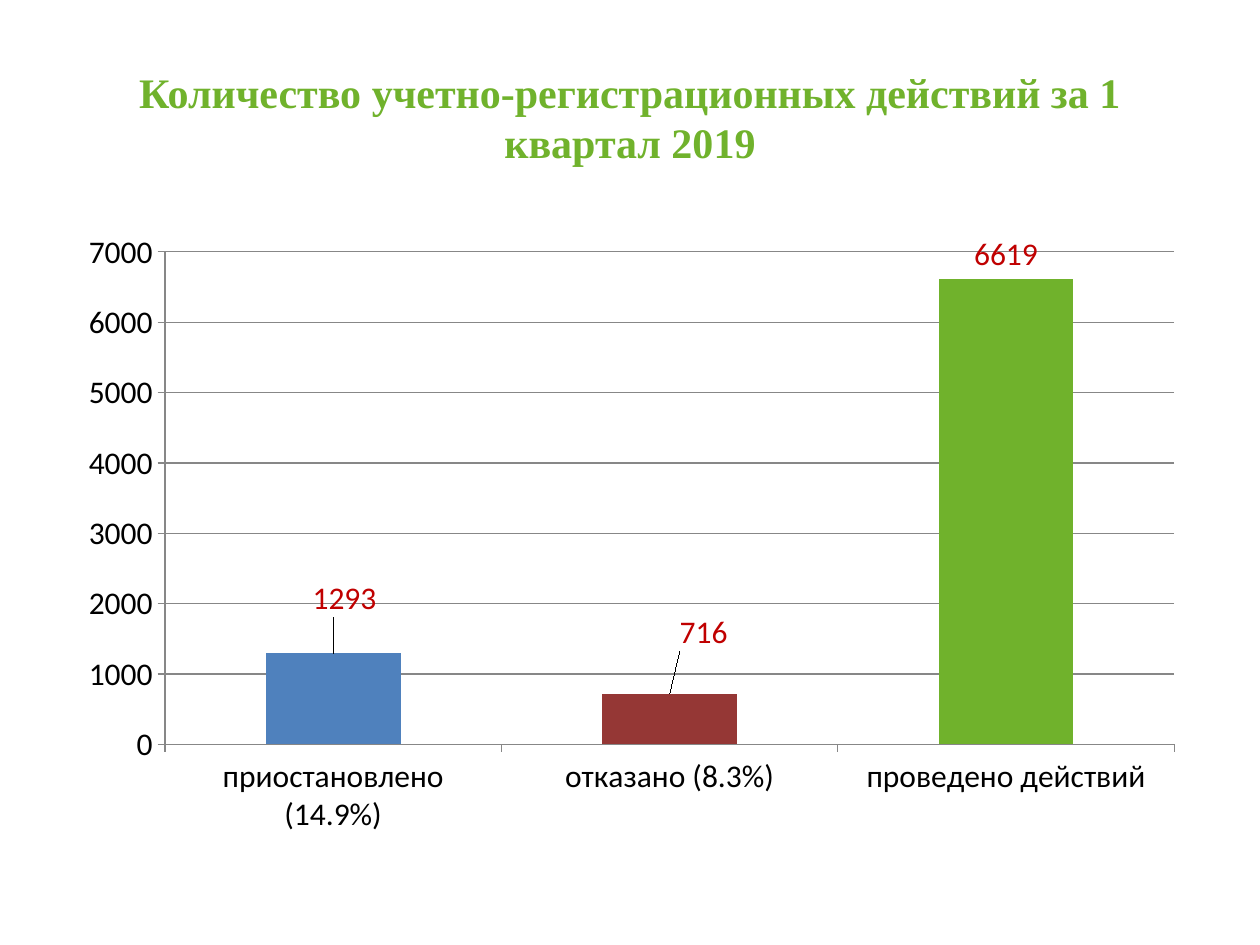
from typing import NamedTuple

from pptx import Presentation
from pptx.chart.data import CategoryChartData
from pptx.dml.color import RGBColor
from pptx.enum.chart import XL_CHART_TYPE, XL_LABEL_POSITION, XL_TICK_MARK
from pptx.enum.text import MSO_ANCHOR, PP_ALIGN
from pptx.oxml import parse_xml
from pptx.oxml.ns import nsdecls
from pptx.util import Cm, Pt

COLUMN = XL_CHART_TYPE.COLUMN_CLUSTERED
ABOVE = XL_LABEL_POSITION.OUTSIDE_END
OUTSIDE = XL_TICK_MARK.OUTSIDE
MIDDLE = MSO_ANCHOR.MIDDLE
CENTER = PP_ALIGN.CENTER

GREEN, RED, GRAY = "70B22C", "C00000", "878787"
LEFT, WIDTH = Cm(1.27), Cm(22.86)


class Bar(NamedTuple):
    name: str
    value: int
    color: str
    shift: tuple[float, float] | None = None  # label offset, share of chart size


BARS = [
    Bar("приостановлено (14.9%)", 1293, "4F81BD", (0.01, -0.05)),
    Bar("отказано (8.3%)", 716, "953735", (0.03, -0.06)),
    Bar("проведено действий", 6619, GREEN),
]


def paint(target, color: str) -> None:
    """Give a fill or a line format one solid colour."""
    if hasattr(target, "solid"):
        target.solid()
        target.fore_color.rgb = RGBColor.from_string(color)
    else:
        paint(target.fill, color)


def style(font, size: int, color: str, name: str = "Calibri") -> None:
    font.size, font.name = Pt(size), name
    font.color.rgb = RGBColor.from_string(color)


def layout(**parts: str | float):
    """Build a manual chart layout from its child values."""
    inner = "".join(f'<c:{key} val="{val}"/>' for key, val in parts.items())
    return parse_xml(
        f'<c:layout {nsdecls("c")}><c:manualLayout>{inner}'
        "</c:manualLayout></c:layout>"
    )


def add_title(slide, text: str) -> None:
    title = slide.shapes.title
    title.left, title.top = LEFT, Cm(0.76)
    title.width, title.height = WIDTH, Cm(3.18)
    frame = title.text_frame
    frame.text = text
    frame.vertical_anchor = MIDDLE
    head = frame.paragraphs[0]
    head.alignment = CENTER
    style(head.font, 24, GREEN, "Times New Roman")
    head.font.bold = True


def add_bars(slide, bars: list[Bar]) -> None:
    data = CategoryChartData()
    data.categories = [bar.name for bar in bars]
    data.add_series("Series 1", [bar.value for bar in bars])
    chart = slide.shapes.add_chart(
        COLUMN, LEFT, Cm(4.45), WIDTH, Cm(12.57), data
    ).chart
    chart.has_legend = chart.has_title = False
    style(chart.font, 18, "000000")

    for axis in (chart.category_axis, chart.value_axis):
        axis.major_tick_mark = OUTSIDE
        paint(axis.format.line, GRAY)
    chart.value_axis.has_major_gridlines = True
    paint(chart.value_axis.major_gridlines.format.line, GRAY)
    chart.value_axis.maximum_scale = 7000
    chart.value_axis.major_unit = 1000

    plot = chart.plots[0]
    plot.gap_width = 150
    plot.vary_by_categories = False
    series = plot.series[0]
    paint(series.format.fill, bars[0].color)
    labels = series.data_labels
    labels.show_value = True
    labels.position = ABOVE
    style(labels.font, 18, RED)

    for index, bar in enumerate(bars):
        point = series.points[index]
        paint(point.format.fill, bar.color)
        if bar.shift:
            style(point.data_label.font, 18, RED)
            point.data_label.position = ABOVE
            label = series._element.xpath(f"c:dLbls/c:dLbl[c:idx/@val='{index}']")[0]
            label.insert(1, layout(x=bar.shift[0], y=bar.shift[1]))

    area = chart._chartSpace.xpath("c:chart/c:plotArea")[0]
    for old in area.xpath("c:layout"):
        area.remove(old)
    area.insert(0, layout(layoutTarget="inner", xMode="edge", yMode="edge",
                          x=0.09, y=0.05, w=0.89, h=0.79))


def main() -> None:
    deck = Presentation()
    deck.slide_width, deck.slide_height = Cm(25.4), Cm(19.05)
    slide = deck.slides.add_slide(deck.slide_layouts[5])
    add_title(slide, "Количество учетно-регистрационных действий за 1 квартал 2019")
    add_bars(slide, BARS)
    deck.save("out.pptx")


if __name__ == "__main__":
    main()
